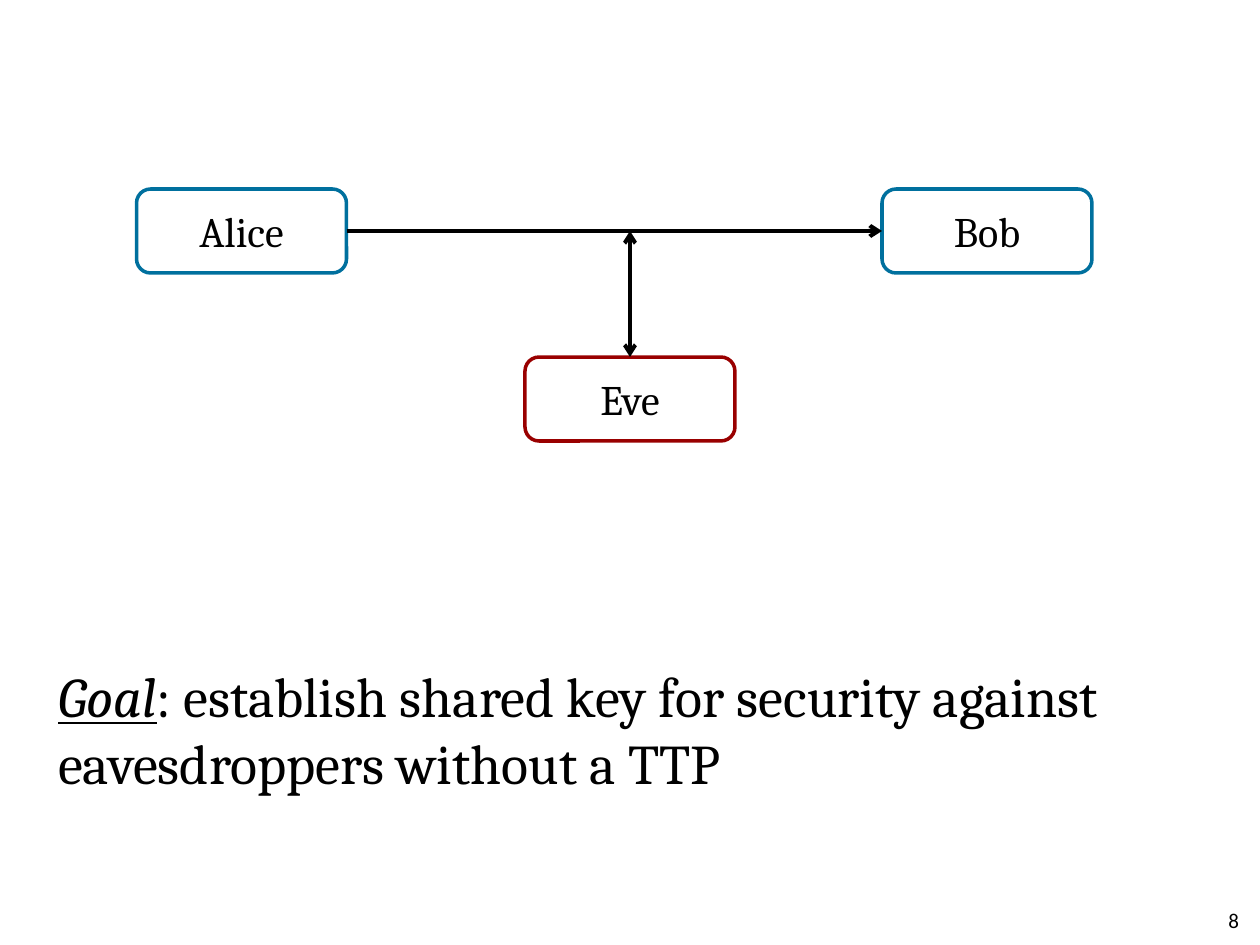
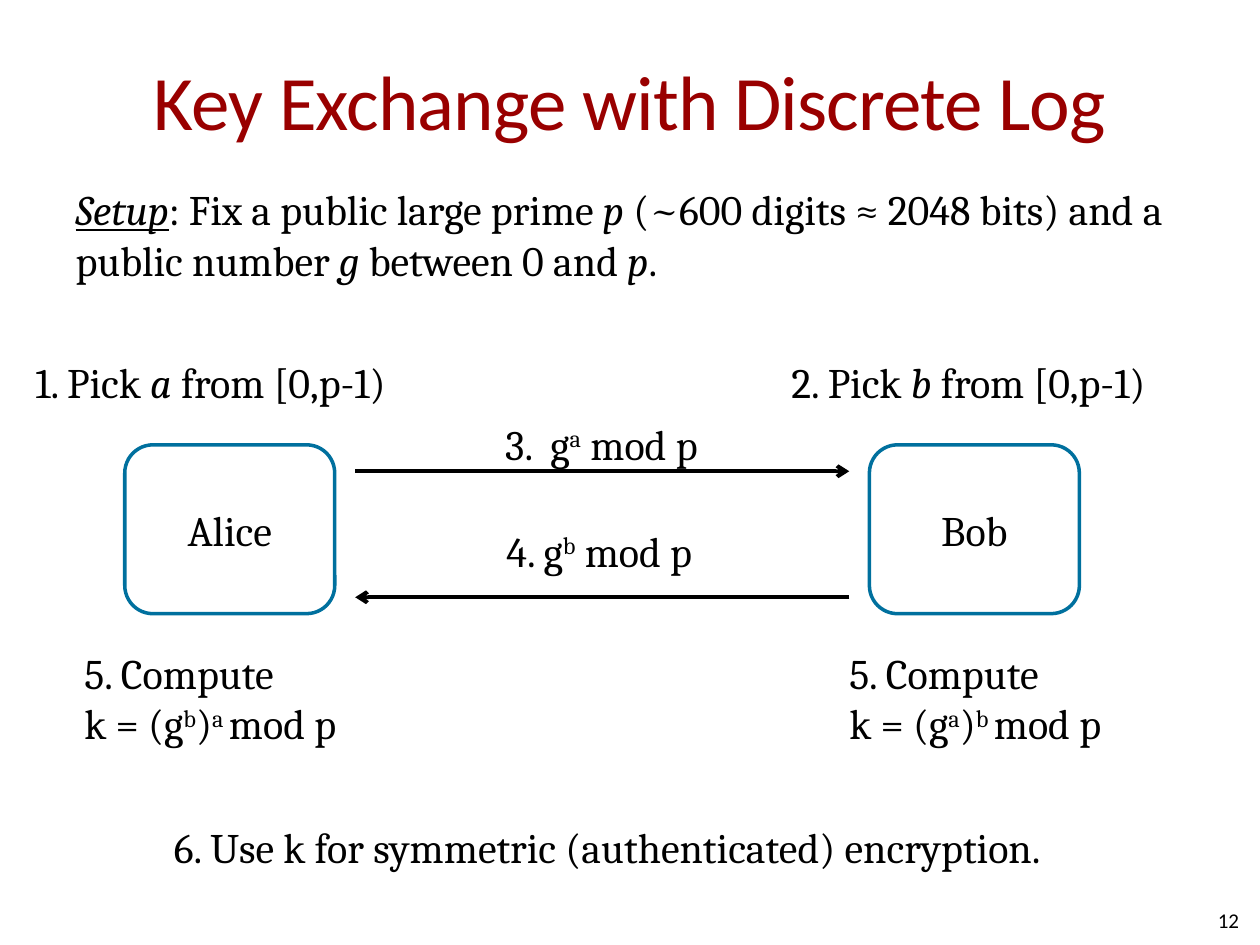
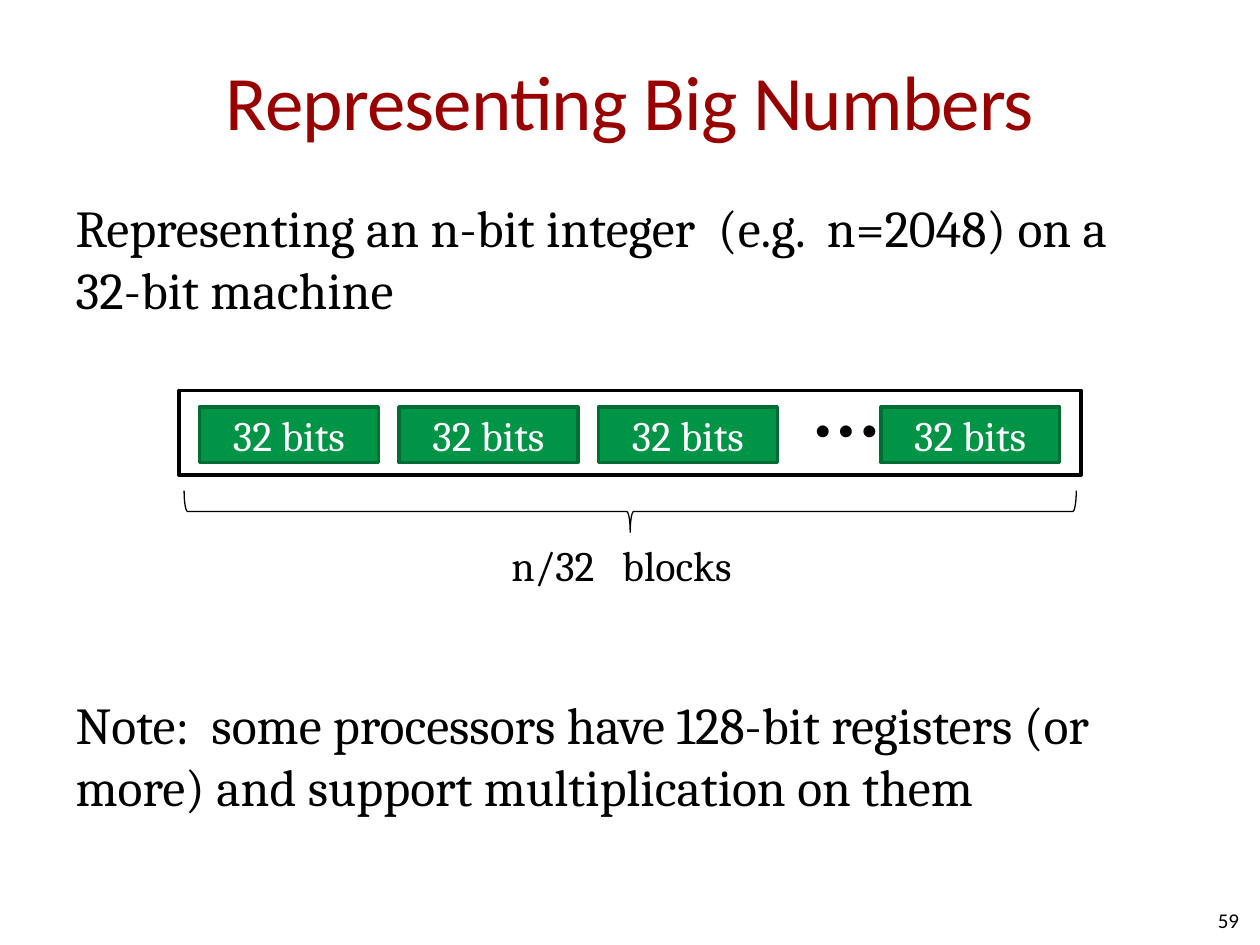
from dataclasses import dataclass

from lxml import etree
from pptx import Presentation
from pptx.dml.color import RGBColor
from pptx.enum import shapes, text
from pptx.oxml import ns
from pptx.util import Pt


@dataclass(frozen=True)
class Theme:
    ink: str = "000000"
    paper: str = "FFFFFF"
    party: str = "00709E"
    danger: str = "990000"
    block: str = "009446"
    block_edge: str = "006D34"
    serif: str = "Cambria"
    sans: str = "Calibri"
    title: float = 44
    goal: float = 32
    body: float = 29.6
    label: float = 24
    dots: float = 40
    number: float = 12


T = Theme()
SHAPE, ANCHOR, ALIGN = shapes.MSO_SHAPE, text.MSO_ANCHOR, text.PP_ALIGN

# A paragraph is a list of runs: a plain string, or (string, style).
STYLES = {"i": {"italic": True}, "iu": {"italic": True, "underline": True}, "sup": {}}

GOAL = [[("Goal", "iu"), ": establish shared key for security against eavesdroppers without a TTP"]]
SETUP = [[("Setup", "iu"), ": Fix a public large prime ", ("p", "i"),
          " (~600 digits ≈ 2048 bits) and a public number ", ("g", "i"),
          " between 0 and ", ("p", "i"), "."]]
BIG_NUMBERS = [["Representing an n-bit integer  (e.g.  n=2048) on a 32-bit machine"],
               ["Note:  some processors have 128-bit registers (or more) "
                "and support multiplication on them"]]


def compute_step(received, own):
    return [["5. Compute"],
            ["k = (g", (received, "sup"), ")", (own + " ", "sup"), "mod p"]]


EXCHANGE_STEPS = [  # box, paragraphs
    ((20.2, 203.8, 218, 29), [["1. Pick ", ("a", "i"), " from [0,p-1)"]]),
    ((452.2, 203.8, 217.5, 29), [["2. Pick ", ("b", "i"), " from [0,p-1)"]]),
    ((288.7, 239, 119.5, 29), [["3.  g", ("a", "sup"), " mod p"]]),
    ((289.4, 300.2, 115.2, 29), [["4. g", ("b", "sup"), " mod p"]]),
    ((48.2, 370, 154.8, 58.3), compute_step("b", "a")),
    ((485.3, 370, 154, 58.3), compute_step("a", "b")),
    ((99.4, 469.4, 521.3, 29), [["6. Use k for symmetric (authenticated) encryption."]]),
]


def rgb(color):
    return RGBColor.from_string(color)


def set_all(target, **values):
    for name, value in values.items():
        setattr(target, name, value)


def place(shape, box):
    for name, value in zip(("left", "top", "width", "height"), box):
        setattr(shape, name, Pt(value))


def set_insets(tf, horizontal=0, vertical=0):
    for side in ("left", "right"):
        setattr(tf, f"margin_{side}", Pt(horizontal))
    for side in ("top", "bottom"):
        setattr(tf, f"margin_{side}", Pt(vertical))


def write(tf, paragraphs, size, color=T.ink, font=T.serif, align=None, bold=None):
    for i, runs in enumerate(paragraphs):
        p = tf.add_paragraph() if i else tf.paragraphs[0]
        p.alignment = align
        for run in runs:
            words, style = (run, None) if isinstance(run, str) else run
            r = p.add_run()
            r.text = words
            set_all(r.font, name=font, size=Pt(size), bold=bold, **STYLES.get(style, {}))
            r.font.color.rgb = rgb(color)
            if style == "sup":
                r.font._element.set("baseline", "30000")


def add_label(s, box, paragraphs, size=T.label, insets=(0, 0), bold=None):
    sp = s.shapes.add_textbox(*map(Pt, box))
    tf = sp.text_frame
    set_insets(tf, *insets)
    set_all(tf, word_wrap=False, auto_size=text.MSO_AUTO_SIZE.SHAPE_TO_FIT_TEXT)
    write(tf, paragraphs, size, bold=bold)


def add_box(s, kind, box, line, fill=None, caption=None, color=T.ink, width=2):
    sp = s.shapes.add_shape(kind, *map(Pt, box))
    sp.shadow.inherit = False
    if fill:
        sp.fill.solid()
        sp.fill.fore_color.rgb = rgb(fill)
    else:
        sp.fill.background()
    sp.line.color.rgb = rgb(line)
    sp.line.width = Pt(width)
    if caption:
        set_insets(sp.text_frame)
        sp.text_frame.vertical_anchor = ANCHOR.MIDDLE
        write(sp.text_frame, [[caption]], T.label, color, align=ALIGN.CENTER)
    return sp


def add_party(s, name, box, line=T.party):
    add_box(s, SHAPE.ROUNDED_RECTANGLE, box, line, T.paper, name)


def add_arrow(s, start, end, both_ways=False):
    c = s.shapes.add_connector(shapes.MSO_CONNECTOR.STRAIGHT, *map(Pt, start + end))
    c.line.color.rgb = rgb(T.ink)
    c.line.width = Pt(2.25)
    ln = c.line._get_or_add_ln()
    for tag in ("a:headEnd", "a:tailEnd") if both_ways else ("a:tailEnd",):
        etree.SubElement(ln, ns.qn(tag), type="arrow")
    etree.SubElement(c._element.spPr, ns.qn("a:effectLst"))


def new_slide(prs, number, body_box, body, size, title=None, gap=None):
    """Add a slide with its title, unbulleted body and page number."""
    s = prs.slides.add_slide(prs.slide_layouts[1])
    heading, content = s.placeholders
    if title:
        place(heading, (36, 12, 648, 90))
        tf = heading.text_frame
        set_insets(tf, vertical=3.6)
        set_all(tf, vertical_anchor=ANCHOR.MIDDLE, auto_size=text.MSO_AUTO_SIZE.NONE)
        write(tf, [[title]], T.title, T.danger, T.sans, ALIGN.CENTER)
        tf.paragraphs[0].runs[0].font._element.set("spc", "-50")
    else:
        heading._element.getparent().remove(heading._element)

    place(content, body_box)
    tf = content.text_frame
    tf.auto_size = text.MSO_AUTO_SIZE.NONE
    write(tf, body, size)
    for p in tf.paragraphs:
        pPr = p._p.get_or_add_pPr()
        pPr.set("marL", "0")
        pPr.set("indent", "0")
        etree.SubElement(pPr, ns.qn("a:buNone"))
    if gap:
        tf.paragraphs[-1].space_before = Pt(gap)

    tf = s.shapes.add_textbox(*map(Pt, (540, 511.2, 168, 28.8))).text_frame
    set_insets(tf)
    set_all(tf, word_wrap=True, vertical_anchor=ANCHOR.MIDDLE)
    write(tf, [[str(number)]], T.number, font=T.sans, align=ALIGN.RIGHT)
    return s


def goal_slide(prs):
    s = new_slide(prs, 8, (26, 374.4, 648, 91.4), GOAL, T.goal)
    w, h, top, alice, bob, eve, eve_top = 120, 48, 108, 78, 504, 300, 204
    wire, tap = top + h / 2, eve + w / 2
    add_party(s, "Alice", (alice, top, w, h))
    add_party(s, "Bob", (bob, top, w, h))
    add_arrow(s, (alice + w, wire), (bob, wire))
    add_party(s, "Eve", (eve, eve_top, w, h), T.danger)
    add_arrow(s, (tap, eve_top), (tap, wire), both_ways=True)


def exchange_slide(prs):
    s = new_slide(prs, 12, (36, 101.5, 648, 91.4), SETUP, T.label,
                  "Key Exchange with Discrete Log")
    left, right, sent, returned = 203, 485.3, 269.3, 341.3
    add_arrow(s, (left, sent), (right, sent))
    add_arrow(s, (right, returned), (left, returned))
    for box, paragraphs in EXCHANGE_STEPS:
        add_label(s, box, paragraphs)
    for name, x in (("Alice", 71.3), ("Bob", 496.8)):
        add_party(s, name, (x, 254.2, 120, 96.5))


def numbers_slide(prs):
    s = new_slide(prs, 59, (36, 108, 648, 374.4), BIG_NUMBERS, T.body,
                  "Representing Big Numbers", gap=213)
    first, pitch, last = 114, 114, 503.3
    for x in [first + i * pitch for i in range(3)] + [last]:
        add_box(s, SHAPE.RECTANGLE, (x, 232.6, 102.2, 31.7), T.block_edge, T.block,
                "32 bits", T.paper)
    add_label(s, (456.5, 213.8, 34.6, 55.4), [["⋯"]], T.dots, (7.2, 3.6), bold=True)
    brace = add_box(s, SHAPE.RIGHT_BRACE, (348.2, 37.4, 23.8, 509.8), T.ink, width=0.75)
    brace.rotation = 90
    add_label(s, (285.1, 304.6, 149, 36), [["n/32   blocks"]], insets=(7.2, 3.6))
    add_box(s, SHAPE.RECTANGLE, (102.2, 223.2, 515.5, 48.2), T.ink)


def main():
    prs = Presentation()
    set_all(prs, slide_width=Pt(720), slide_height=Pt(540))
    for build in (goal_slide, exchange_slide, numbers_slide):
        build(prs)
    prs.save("out.pptx")


if __name__ == "__main__":
    main()
